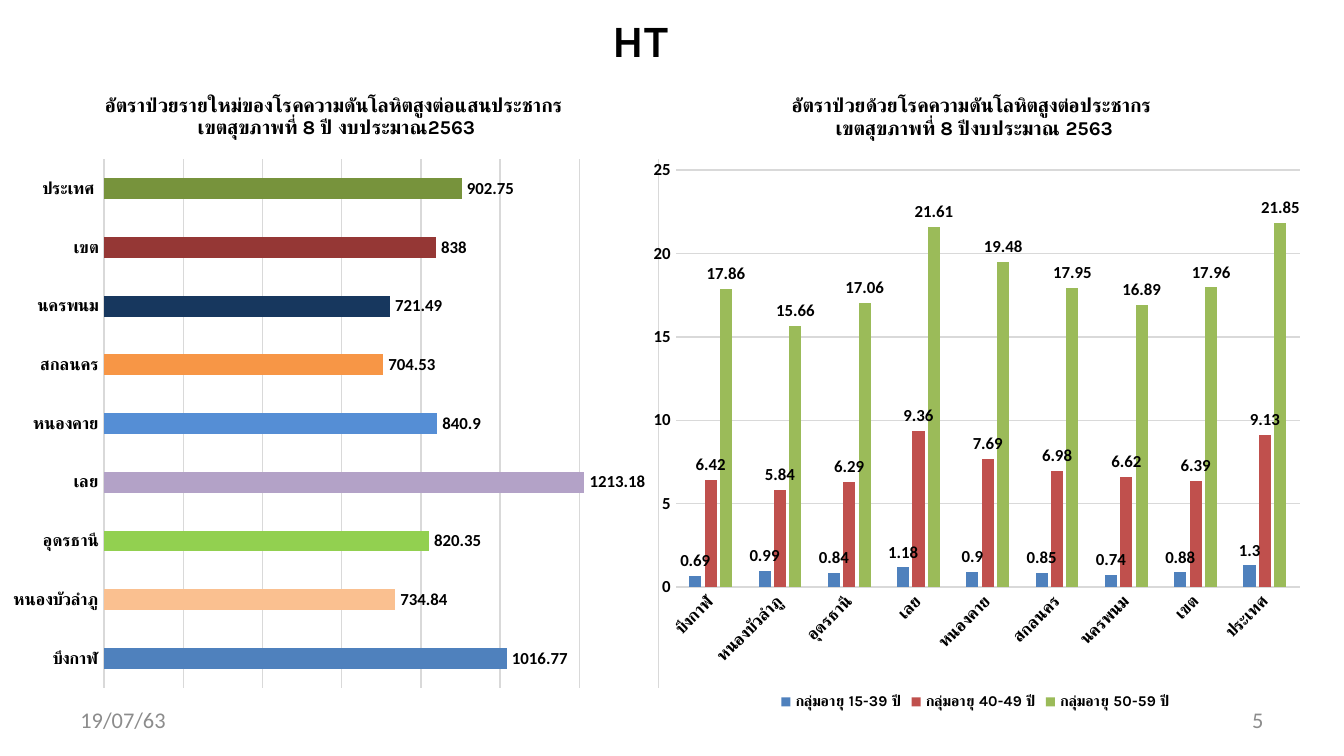
"""Build the hypertension slide: new-case rates and rates by age group."""
from dataclasses import dataclass
from typing import Any, Optional

from lxml import etree
from pptx import Presentation
from pptx import util as u
from pptx.chart.data import CategoryChartData
from pptx.dml.color import RGBColor
from pptx.enum import chart as charts, text
from pptx.oxml import ns

BLACK = RGBColor(0x00, 0x00, 0x00)
GREY = RGBColor(0x8C, 0x8C, 0x8C)
RULE = RGBColor(0xD9, 0xD9, 0xD9)
BLUE = RGBColor(0x4F, 0x81, 0xBD)
RED = RGBColor(0xC0, 0x50, 0x4D)
GREEN = RGBColor(0x9B, 0xBB, 0x59)
PEACH = RGBColor(0xFA, 0xC0, 0x90)
LIME = RGBColor(0x92, 0xD0, 0x50)
LILAC = RGBColor(0xB3, 0xA2, 0xC7)
SKY = RGBColor(0x55, 0x8E, 0xD5)
ORANGE = RGBColor(0xF7, 0x96, 0x46)
NAVY = RGBColor(0x17, 0x37, 0x5E)
MAROON = RGBColor(0x95, 0x37, 0x35)
OLIVE = RGBColor(0x77, 0x93, 0x3C)

PROVINCES = ["บึงกาฬ", "หนองบัวลำภู", "อุดรธานี", "เลย", "หนองคาย",
             "สกลนคร", "นครพนม", "เขต"]
HEADING = {"name": "Karla", "size": u.Pt(24), "bold": True}
CHART_TITLE = {"name": "Karla", "size": u.Pt(10.5), "bold": True}
CATEGORY = {"name": "Karla", "size": u.Pt(9), "bold": True}
VALUE = {"name": "Calibri", "size": u.Pt(9), "bold": True}
LEGEND = {"name": "Karla", "size": u.Pt(8), "bold": True}
BASE = {"name": "Calibri", "size": u.Pt(10)}
FOOTER = {"name": "Calibri", "size": u.Pt(12)}


@dataclass
class Series:
    name: str
    values: list[float]
    color: RGBColor


@dataclass
class RateChart:
    kind: Any
    frame: tuple[float, float, float, float]
    title: str
    title_at: tuple[float, float]
    plot_area: tuple[float, float, float, float]
    categories: list[str]
    series: list[Series]
    gap: int
    top: float
    step: float
    overlap: int = 0
    turn: Optional[int] = None
    point_colors: tuple[RGBColor, ...] = ()
    show_scale: bool = True


@dataclass
class FooterText:
    left: float
    words: str
    align: Any


def style(font: Any, form: dict[str, Any], color: RGBColor = BLACK) -> None:
    """Apply a dict of font values and a colour."""
    for name, value in form.items():
        setattr(font, name, value)
    font.color.rgb = color


def fill(item: Any, color: RGBColor) -> None:
    """Give a series or a point a solid fill."""
    item.format.fill.solid()
    item.format.fill.fore_color.rgb = color


def rule(line: Any) -> None:
    """Draw a thin light rule."""
    line.color.rgb = RULE
    line.width = u.Pt(0.75)


def set_layout(parent: Any, index: int, edges: dict[str, Any]) -> None:
    """Place a chart part by hand."""
    for old in parent.findall(ns.qn("c:layout")):
        parent.remove(old)
    layout = etree.Element(ns.qn("c:layout"))
    manual = etree.SubElement(layout, ns.qn("c:manualLayout"))
    for name, value in edges.items():
        etree.SubElement(manual, ns.qn(f"c:{name}")).set("val", str(value))
    parent.insert(index, layout)


def draw_chart(page: Any, rate: RateChart) -> None:
    """Add one formatted rate chart."""
    data = CategoryChartData()
    data.categories = rate.categories
    for series in rate.series:
        data.add_series(series.name, series.values)
    chart = page.shapes.add_chart(rate.kind, *map(u.Cm, rate.frame), data).chart
    style(chart.font, BASE)

    frame = chart.chart_title.text_frame
    frame.text = rate.title
    for para in frame.paragraphs:
        for span in para.runs:
            style(span.font, CHART_TITLE)
    modes = {"xMode": "edge", "yMode": "edge"}
    set_layout(chart.chart_title._element, 1,
               modes | dict(zip("xy", rate.title_at)))
    set_layout(chart.plots[0]._element.getparent(), 0,
               {"layoutTarget": "inner"} | modes | dict(zip("xywh", rate.plot_area)))

    axis = chart.category_axis
    axis.major_tick_mark = charts.XL_TICK_MARK.NONE
    rule(axis.format.line)
    style(axis.tick_labels.font, CATEGORY)
    if rate.turn is not None:
        body = axis._element.find(ns.qn("c:txPr")).find(ns.qn("a:bodyPr"))
        body.set("rot", str(rate.turn * 60000))

    scale = chart.value_axis
    limits = {"minimum_scale": 0, "maximum_scale": rate.top, "major_unit": rate.step,
              "major_tick_mark": charts.XL_TICK_MARK.NONE, "visible": rate.show_scale}
    for name, value in limits.items():
        setattr(scale, name, value)
    rule(scale.major_gridlines.format.line)
    scale.format.line.fill.background()
    style(scale.tick_labels.font, VALUE)

    plot = chart.plots[0]
    settings = {"gap_width": rate.gap, "overlap": rate.overlap, "vary_by_categories": False}
    for name, value in settings.items():
        setattr(plot, name, value)
    for bars, series in zip(plot.series, rate.series):
        bars.invert_if_negative = False
        fill(bars, series.color)
        for index, color in enumerate(rate.point_colors, 1):
            fill(bars.points[index], color)
        labels = bars.data_labels
        labels.show_value = True
        labels.position = charts.XL_LABEL_POSITION.OUTSIDE_END
        style(labels.font, VALUE)

    chart.has_legend = len(rate.series) > 1
    if chart.has_legend:
        chart.legend.position = charts.XL_LEGEND_POSITION.BOTTOM
        chart.legend.include_in_layout = False
        style(chart.legend.font, LEGEND)


def write(box: Any, words: str, align: Any, form: dict[str, Any], color: RGBColor) -> None:
    """Write one vertically centred line in a box."""
    frame = box.text_frame
    frame.word_wrap = True
    frame.vertical_anchor = text.MSO_ANCHOR.MIDDLE
    para = frame.paragraphs[0]
    para.alignment = align
    span = para.add_run()
    span.text = words
    style(span.font, form, color)


NEW_CASES = RateChart(
    charts.XL_CHART_TYPE.BAR_CLUSTERED, (0, 1.35, 12.7, 11.89),
    "อัตราป่วยรายใหม่ของโรคความดันโลหิตสูงต่อแสนประชากร \nเขตสุขภาพที่ 8 ปี งบประมาณ2563",
    (0.15, 0.03), (0.155, 0.14, 0.825, 0.84), PROVINCES + ["ประเทศ "],
    [Series("Series 1", [1016.77, 734.84, 820.35, 1213.18, 840.9,
                         704.53, 721.49, 838, 902.75], BLUE)],
    gap=182, top=1400, step=200, show_scale=False,
    point_colors=(PEACH, LIME, LILAC, SKY, ORANGE, NAVY, MAROON, OLIVE))
AGE_GROUPS = RateChart(
    charts.XL_CHART_TYPE.COLUMN_CLUSTERED, (12.09, 1.35, 12.7, 12.19),
    "อัตราป่วยด้วยโรคความดันโลหิตสูงต่อประชากร \nเขตสุขภาพที่ 8 ปีงบประมาณ 2563",
    (0.22, 0.03), (0.054, 0.153, 0.928, 0.647), PROVINCES + ["ประเทศ"],
    [Series("กลุ่มอายุ 15-39 ปี",
            [0.69, 0.99, 0.84, 1.18, 0.9, 0.85, 0.74, 0.88, 1.3], BLUE),
     Series("กลุ่มอายุ 40-49 ปี",
            [6.42, 5.84, 6.29, 9.36, 7.69, 6.98, 6.62, 6.39, 9.13], RED),
     Series("กลุ่มอายุ 50-59 ปี",
            [17.86, 15.66, 17.06, 21.61, 19.48, 17.95, 16.89, 17.96, 21.85], GREEN)],
    gap=219, top=25, step=5, overlap=-27, turn=-45)
FOOTERS = [FooterText(1.27, "19/07/63", text.PP_ALIGN.LEFT),
           FooterText(18.21, "5", text.PP_ALIGN.RIGHT)]


def main() -> None:
    """Build and save the deck."""
    deck = Presentation()
    deck.slide_width, deck.slide_height = u.Cm(25.4), u.Cm(14.29)
    page = deck.slides.add_slide(deck.slide_layouts[5])
    for footer in FOOTERS:
        box = page.shapes.add_textbox(*map(u.Cm, (footer.left, 13.23, 5.92, 0.76)))
        write(box, footer.words, footer.align, FOOTER, GREY)
    for rate in (NEW_CASES, AGE_GROUPS):
        draw_chart(page, rate)
    title = page.shapes.title
    for name, value in zip(("left", "top", "width", "height"), (9.14, 0.28, 5.92, 0.94)):
        setattr(title, name, u.Cm(value))
    write(title, "HT", text.PP_ALIGN.CENTER, HEADING, BLACK)
    deck.save("out.pptx")


if __name__ == "__main__":
    main()
